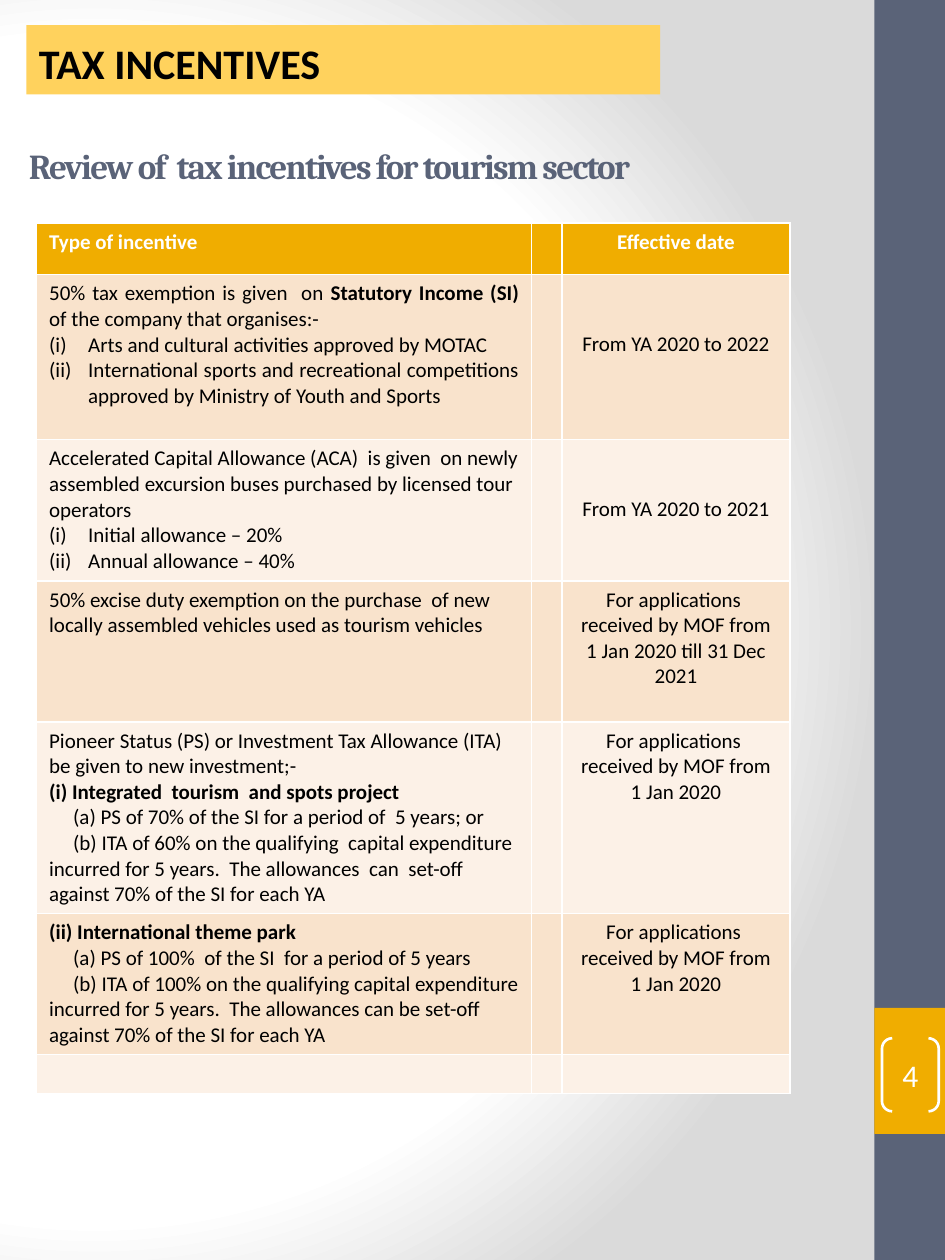
import pptx
import pptx.util
import pptx.dml.color
import pptx.enum.shapes
import pptx.enum.text
import pptx.oxml
from pptx.oxml.ns import nsdecls

Inches = pptx.util.Inches
Pt = pptx.util.Pt
Align = pptx.enum.text.PP_ALIGN
Anchor = pptx.enum.text.MSO_ANCHOR
Shape = pptx.enum.shapes.MSO_SHAPE

SLATE, GOLD, YELLOW = "5A6378", "F0AD00", "FFD25D"
BANDS = ("F9E3CC", "FCF1E7")
WHITE, BLACK = "FFFFFF", "000000"

COLUMN_WIDTHS = (3.93, 0.24, 1.81)
ROW_HEIGHTS = (0.41, 1.31, 1.12, 1.12, 1.52, 1.11, 0.31)
LINE = 0.2
HANG = 0.31

# A paragraph is (kind, text); ** surrounds bold words.
# Each row holds its paragraphs, its date and the lines the date is lowered by.
INCENTIVES = [
    ([("justified", "50% tax exemption is given  on **Statutory Income (SI)** "
       "of the company that organises:-"),
      ("numbered justified", "Arts and cultural activities approved by MOTAC"),
      ("numbered justified", "International sports and recreational competitions "
       "approved by Ministry of Youth and Sports")],
     "From YA 2020 to 2022", 2),
    ([("plain", "Accelerated Capital Allowance (ACA)  is given  on newly assembled "
       "excursion buses purchased by licensed tour operators"),
      ("numbered", "Initial allowance – 20%"),
      ("numbered", "Annual allowance – 40%")],
     "From YA 2020 to 2021", 2),
    ([("plain", "50% excise duty exemption on the purchase  of new locally "
       "assembled vehicles used as tourism vehicles")],
     "For applications  received by MOF from 1 Jan 2020 till 31 Dec 2021", 0),
    ([("plain", "Pioneer Status (PS) or Investment Tax Allowance (ITA) be given "
       "to new investment;-"),
      ("plain", "**(i) Integrated  tourism  and spots project**"),
      ("indented", "(a) PS of 70% of the SI for a period of  5 years; or"),
      ("indented", "(b) ITA of 60% on the qualifying  capital expenditure  incurred "
       "for 5 years.  The allowances  can  set-off  against 70% of the SI for each YA")],
     "For applications  received by MOF from 1 Jan 2020", 0),
    ([("plain", "**(ii) International theme park**"),
      ("indented", "(a) PS of 100%  of the SI  for a period of 5 years"),
      ("indented", "(b) ITA of 100% on the qualifying capital expenditure incurred "
       "for 5 years.  The allowances can be set-off against 70% of the SI for each YA")],
     "For applications  received by MOF from 1 Jan 2020", 0),
    ([], "", 0),
]


def rgb(value):
    return pptx.dml.color.RGBColor.from_string(value)


def style(para, size, color, bold=None, name="Calibri", align=Align.LEFT):
    para.alignment = align
    font = para.font
    font.name, font.size, font.bold = name, Pt(size), bold
    font.color.rgb = rgb(color)


def add_panel(page, box, fill=None, kind=Shape.RECTANGLE):
    panel = page.shapes.add_shape(kind, *map(Inches, box))
    panel.shadow.inherit = False
    panel.line.fill.background()
    if fill:
        panel.fill.solid()
        panel.fill.fore_color.rgb = rgb(fill)
    else:
        panel.fill.background()
    return panel


def paint_background(page):
    """Radial gradient, which python-pptx cannot set by itself."""
    page.background.fill.solid()
    properties = page.background.fill._xPr
    stops = "".join(
        f'<a:gs pos="{place * 1000}"><a:srgbClr val="{color}"/></a:gs>'
        for place, color in ((0, WHITE), (75, WHITE), (100, "DADADA")))
    gradient = pptx.oxml.parse_xml(
        f'<a:gradFill {nsdecls("a")} rotWithShape="1"><a:gsLst>{stops}</a:gsLst>'
        '<a:path path="circle"><a:fillToRect l="20000" t="50000" r="100000" b="50000"/>'
        '</a:path></a:gradFill>')
    properties.replace(properties[0], gradient)


def add_sidebar(page, box, number):
    left, top, width, height = box
    add_panel(page, box, SLATE)
    add_panel(page, (left, top + 0.8 * height, width, height / 10), GOLD)
    bracket = add_panel(page, (left + 0.06, top + 8.24, 0.45, 0.58),
                        kind=Shape.DOUBLE_BRACKET)
    bracket.adjustments[0] = 0.18
    bracket.line.color.rgb = rgb(WHITE)
    bracket.line.width = Pt(1.5)
    frame = bracket.text_frame
    frame.margin_left = frame.margin_right = frame.margin_top = frame.margin_bottom = 0
    frame.vertical_anchor = Anchor.MIDDLE
    frame.text = number
    style(frame.paragraphs[0], 18, WHITE, align=Align.CENTER)


def add_banner(page, box, text):
    frame = add_panel(page, box, YELLOW).text_frame
    frame.vertical_anchor = Anchor.BOTTOM
    frame.text = text
    style(frame.paragraphs[0], 24, BLACK, bold=True)


def place_title(page, box, text):
    title = page.shapes.title
    title.left, title.top, title.width, title.height = map(Inches, box)
    frame = title.text_frame
    frame.vertical_anchor = Anchor.TOP
    frame.text = text
    para = frame.paragraphs[0]
    style(para, 20, SLATE, bold=True, name="Cambria")
    para.runs[0].font._element.set("spc", "-100")


def write_paragraph(para, kind, text):
    style(para, 12, BLACK,
          align=Align.JUSTIFY if "justified" in kind else Align.LEFT)
    for index, part in enumerate(text.split("**")):
        if part:
            span = para.add_run()
            span.text = part
            if index % 2:
                span.font.bold = True
    properties = para._p.get_or_add_pPr()
    if "numbered" in kind:
        properties.set("marL", str(Inches(HANG)))
        properties.set("indent", str(-Inches(HANG)))
        properties.insert(0, pptx.oxml.parse_xml(
            f'<a:buAutoNum {nsdecls("a")} type="romanLcParenBoth"/>'))
    elif kind == "indented":
        properties.set("indent", str(Inches(0.19)))


def add_incentive_table(page, box):
    table = page.shapes.add_table(len(ROW_HEIGHTS), len(COLUMN_WIDTHS),
                                  *map(Inches, box)).table
    for column, width in zip(table.columns, COLUMN_WIDTHS):
        column.width = Inches(width)
    for index, (row, height) in enumerate(zip(table.rows, ROW_HEIGHTS)):
        row.height = Inches(height)
        for cell in row.cells:
            cell.fill.solid()
            cell.fill.fore_color.rgb = rgb(BANDS[(index - 1) % 2] if index else GOLD)
            style(cell.text_frame.paragraphs[0], 12, BLACK)

    headings = (("Type of incentive", Align.LEFT), ("", Align.LEFT),
                ("Effective date", Align.CENTER))
    for cell, (heading, align) in zip(table.rows[0].cells, headings):
        cell.text = heading
        style(cell.text_frame.paragraphs[0], 12, WHITE, bold=True, align=align)

    for index, (paragraphs, date, lowered) in enumerate(INCENTIVES, start=1):
        frame = table.cell(index, 0).text_frame
        for order, (kind, text) in enumerate(paragraphs):
            para = frame.add_paragraph() if order else frame.paragraphs[0]
            write_paragraph(para, kind, text)
        cell = table.cell(index, 2)
        cell.text = date
        cell.margin_top = Inches(0.05 + lowered * LINE)
        style(cell.text_frame.paragraphs[0], 12, BLACK, align=Align.CENTER)


def main():
    deck = pptx.Presentation()
    deck.slide_width, deck.slide_height = Inches(7.5), Inches(10)
    page = deck.slides.add_slide(deck.slide_layouts[5])
    paint_background(page)
    add_sidebar(page, (6.94, 0, 0.56, 10), "4")
    place_title(page, (0.13, 1.1, 6.61, 0.55),
                "Review of  tax incentives for tourism sector")
    add_banner(page, (0.21, 0.2, 5.03, 0.55), "TAX INCENTIVES")
    add_incentive_table(page, (0.29, 1.77, sum(COLUMN_WIDTHS), sum(ROW_HEIGHTS)))
    deck.save("out.pptx")


if __name__ == "__main__":
    main()
